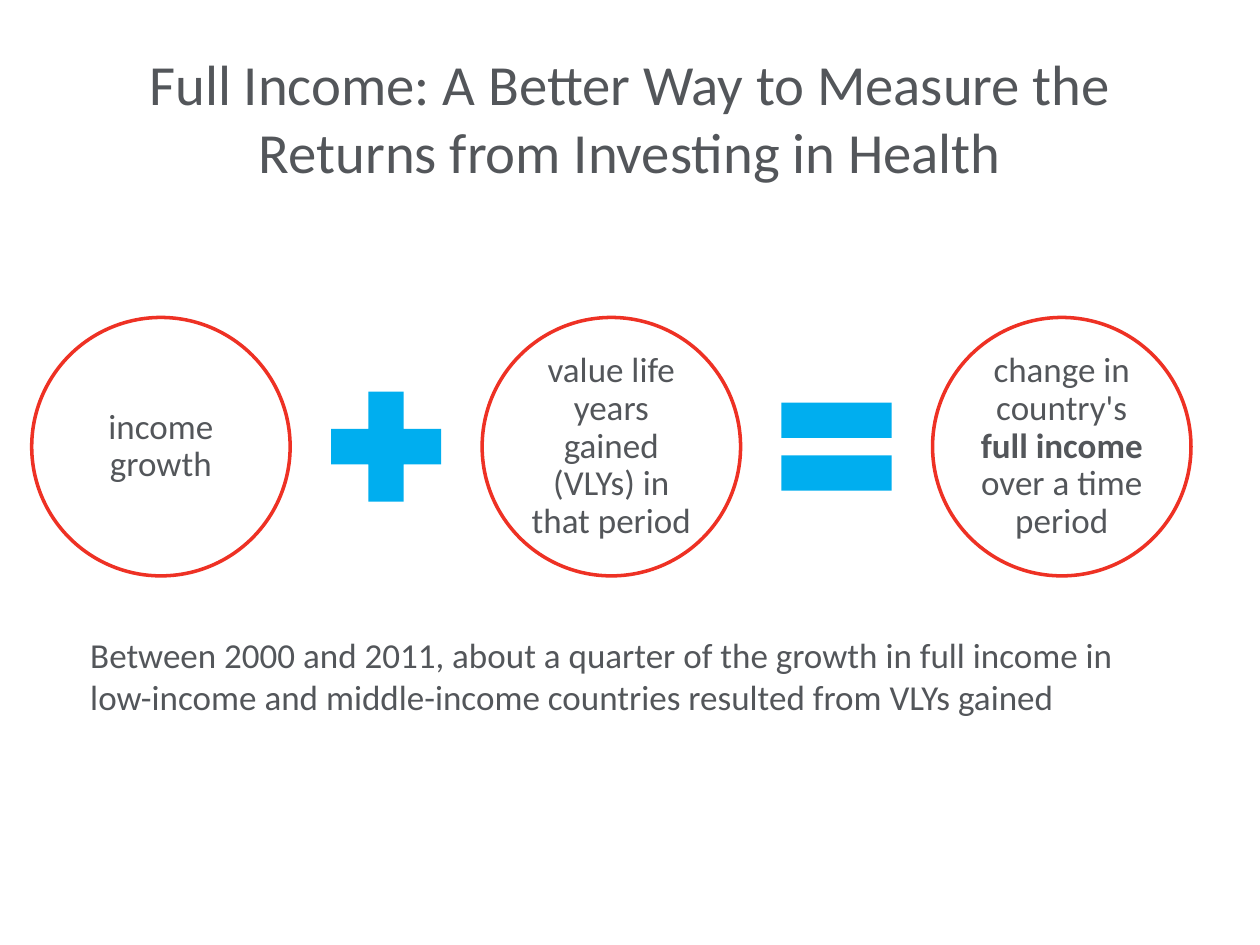
from pptx import Presentation
from pptx.dml.color import RGBColor
from pptx.enum.shapes import MSO_SHAPE
from pptx.enum.text import MSO_ANCHOR, MSO_AUTO_SIZE, PP_ALIGN
from pptx.util import Cm, Pt

GREY = RGBColor(0x53, 0x56, 0x5A)
RED = RGBColor(0xEE, 0x31, 0x24)
BLUE = RGBColor(0x00, 0xAE, 0xEF)
WHITE = RGBColor(0xFF, 0xFF, 0xFF)
FONT = "Calibri"

CIRCLE, PLUS, EQUAL = MSO_SHAPE.OVAL, MSO_SHAPE.MATH_PLUS, MSO_SHAPE.MATH_EQUAL
MIDDLE, TOP = MSO_ANCHOR.MIDDLE, MSO_ANCHOR.TOP
CENTER, LEFT = PP_ALIGN.CENTER, PP_ALIGN.LEFT
NO_AUTOFIT = MSO_AUTO_SIZE.NONE

# Each term is a list of (text, bold) runs
TERMS = [
    [("income growth", False)],
    [("value life years gained (VLYs) in that period", False)],
    [("change in country's ", False), ("full income ", True),
     ("over a time period", False)],
]
OPERATORS = [PLUS, EQUAL]
CIRCLE_SIZE = 5.21
OPERATOR_SIZE = 3.02


def write_text(shape, runs, size=20, align=LEFT, anchor=TOP, inset=None,
               line_spacing=None):
    """Fill a shape with one paragraph of (text, bold) runs."""
    frame = shape.text_frame
    frame.word_wrap = True
    frame.auto_size = NO_AUTOFIT
    frame.vertical_anchor = anchor
    if inset is not None:
        frame.margin_left = frame.margin_right = Cm(inset)
        frame.margin_top = frame.margin_bottom = Cm(inset)
    paragraph = frame.paragraphs[0]
    paragraph.alignment = align
    if line_spacing is not None:
        paragraph.line_spacing = line_spacing
    for text, bold in runs:
        run = paragraph.add_run()
        run.text = text
        run.font.name = FONT
        run.font.size = Pt(size)
        run.font.bold = bold
        run.font.color.rgb = GREY


def add_symbol(slide, kind, left, top, size, fill, line=None):
    """Add a square preset shape with a plain fill and optional outline."""
    shape = slide.shapes.add_shape(kind, Cm(left), Cm(top), Cm(size), Cm(size))
    shape.shadow.inherit = False
    shape.fill.solid()
    shape.fill.fore_color.rgb = fill
    if line is None:
        shape.line.fill.background()
    else:
        shape.line.color.rgb = line
        shape.line.width = Pt(2)
    return shape


def place_title(slide, left, top, width, height):
    title = slide.shapes.title
    title.left, title.top = Cm(left), Cm(top)
    title.width, title.height = Cm(width), Cm(height)
    write_text(title, [("Full Income: A Better Way to Measure the Returns "
                        "from Investing in Health", False)],
               size=32.4, align=CENTER, anchor=MIDDLE)


def add_equation(slide, left, top, width):
    """Spread circles and operators over the width with equal gaps."""
    used = len(TERMS) * CIRCLE_SIZE + len(OPERATORS) * OPERATOR_SIZE
    gap = (width - used) / (len(TERMS) + len(OPERATORS) - 1)
    pitch = CIRCLE_SIZE + OPERATOR_SIZE + 2 * gap

    for index, runs in enumerate(TERMS):
        circle = add_symbol(slide, CIRCLE, left + index * pitch, top,
                            CIRCLE_SIZE, WHITE, RED)
        write_text(circle, runs, align=CENTER, anchor=MIDDLE, inset=0.07,
                   line_spacing=0.9)

    operator_top = top + (CIRCLE_SIZE - OPERATOR_SIZE) / 2
    for index, kind in enumerate(OPERATORS):
        operator_left = left + index * pitch + CIRCLE_SIZE + gap
        add_symbol(slide, kind, operator_left, operator_top, OPERATOR_SIZE, BLUE)


def add_finding(slide, left, top, width, height):
    box = slide.shapes.add_textbox(Cm(left), Cm(top), Cm(width), Cm(height))
    write_text(box, [("Between 2000 and 2011, about a quarter of the growth in "
                      "full income in low-income and middle-income countries "
                      "resulted from VLYs gained", False)])


def main():
    presentation = Presentation()
    presentation.slide_width, presentation.slide_height = Cm(25.4), Cm(19.05)
    title_only = presentation.slide_layouts[5]
    slide = presentation.slides.add_slide(title_only)

    place_title(slide, 1.27, 0.76, 22.86, 3.18)
    add_equation(slide, 0.64, 6.4, 23.37)
    add_finding(slide, 1.57, 12.65, 22.23, 1.96)
    presentation.save("out.pptx")


if __name__ == "__main__":
    main()
